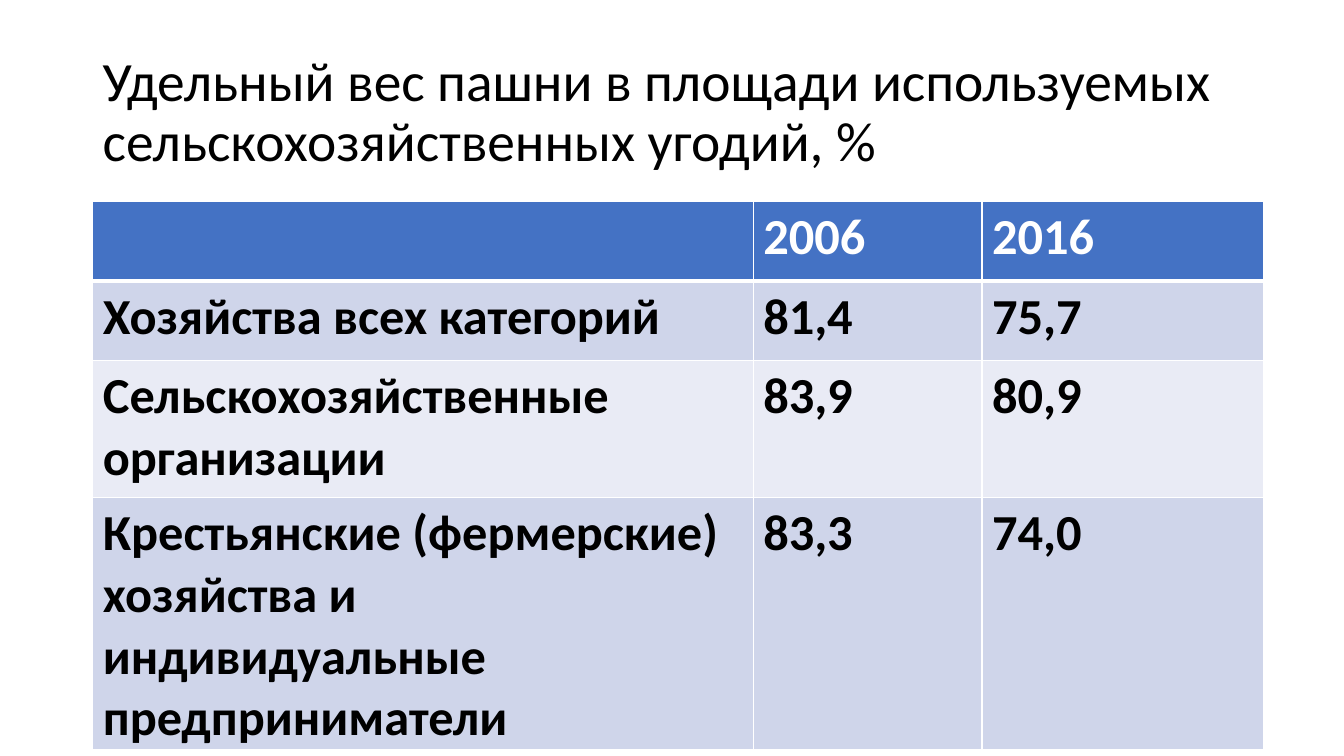
"""Build a slide with a table of arable land shares by farm category."""
import pptx
import pptx.dml.color
import pptx.enum.text
import pptx.oxml
import pptx.oxml.ns
import pptx.util
from pptx.util import Inches, Pt

TITLE = "Удельный вес пашни в площади используемых сельскохозяйственных угодий, %"
ROWS = [
    ("", "2006", "2016"),
    ("Хозяйства всех категорий", "81,4", "75,7"),
    ("Сельскохозяйственные организации", "83,9", "80,9"),
    ("Крестьянские (фермерские) хозяйства и индивидуальные предприниматели",
     "83,3", "74,0"),
]
COL_WIDTHS = (6.55, 2.27, 2.79)
ROW_HEIGHTS = (0.79, 0.79, 1.36, 2.41)
FONT = "Calibri"
WHITE, BLACK = "FFFFFF", "000000"
HEADER_FILL = "4472C4"
BAND_FILLS = ("E9EBF5", "CFD5EA")


def rgb(value):
    return pptx.dml.color.RGBColor.from_string(value)


def add_run(p, text, size, color, bold=False):
    r = p.add_run()
    r.text = text
    r.font.name = FONT
    r.font.size = Pt(size)
    r.font.bold = bold
    r.font.color.rgb = rgb(color)


def add_borders(cell, widths):
    tc_pr = cell._tc.get_or_add_tcPr()
    for side, width in widths.items():
        tc_pr.append(pptx.oxml.parse_xml(
            f'<a:ln{side} {pptx.oxml.ns.nsdecls("a")} w="{Pt(width)}">'
            f'<a:solidFill><a:srgbClr val="{WHITE}"/></a:solidFill></a:ln{side}>'))


def add_title(slide):
    sp = slide.shapes.add_textbox(Inches(0.92), Inches(0.4), Inches(11.5), Inches(1.45))
    tf = sp.text_frame
    tf.word_wrap = True
    tf.vertical_anchor = pptx.enum.text.MSO_ANCHOR.MIDDLE
    p = tf.paragraphs[0]
    p.line_spacing = 0.9
    add_run(p, TITLE, 39.6, BLACK)


def add_share_table(slide):
    table = slide.shapes.add_table(
        len(ROWS), len(COL_WIDTHS), Inches(0.92), Inches(2),
        Inches(sum(COL_WIDTHS)), Inches(sum(ROW_HEIGHTS))).table
    for column, width in zip(table.columns, COL_WIDTHS):
        column.width = Inches(width)
    for i, (row, height, texts) in enumerate(zip(table.rows, ROW_HEIGHTS, ROWS)):
        row.height = Inches(height)
        header = i == 0
        widths = {"L": 1, "R": 1, "T": 3 if i == 1 else 1, "B": 3 if header else 1}
        for cell, text in zip(row.cells, texts):
            add_borders(cell, widths)
            cell.fill.solid()
            cell.fill.fore_color.rgb = rgb(HEADER_FILL if header else BAND_FILLS[i % 2])
            if text:
                add_run(cell.text_frame.paragraphs[0], text, 36,
                        WHITE if header else BLACK, True)


def main():
    prs = pptx.Presentation()
    prs.slide_width, prs.slide_height = Inches(13.33), Inches(7.5)
    slide = prs.slides.add_slide(prs.slide_layouts[6])
    add_title(slide)
    add_share_table(slide)
    prs.save("out.pptx")


if __name__ == "__main__":
    main()
